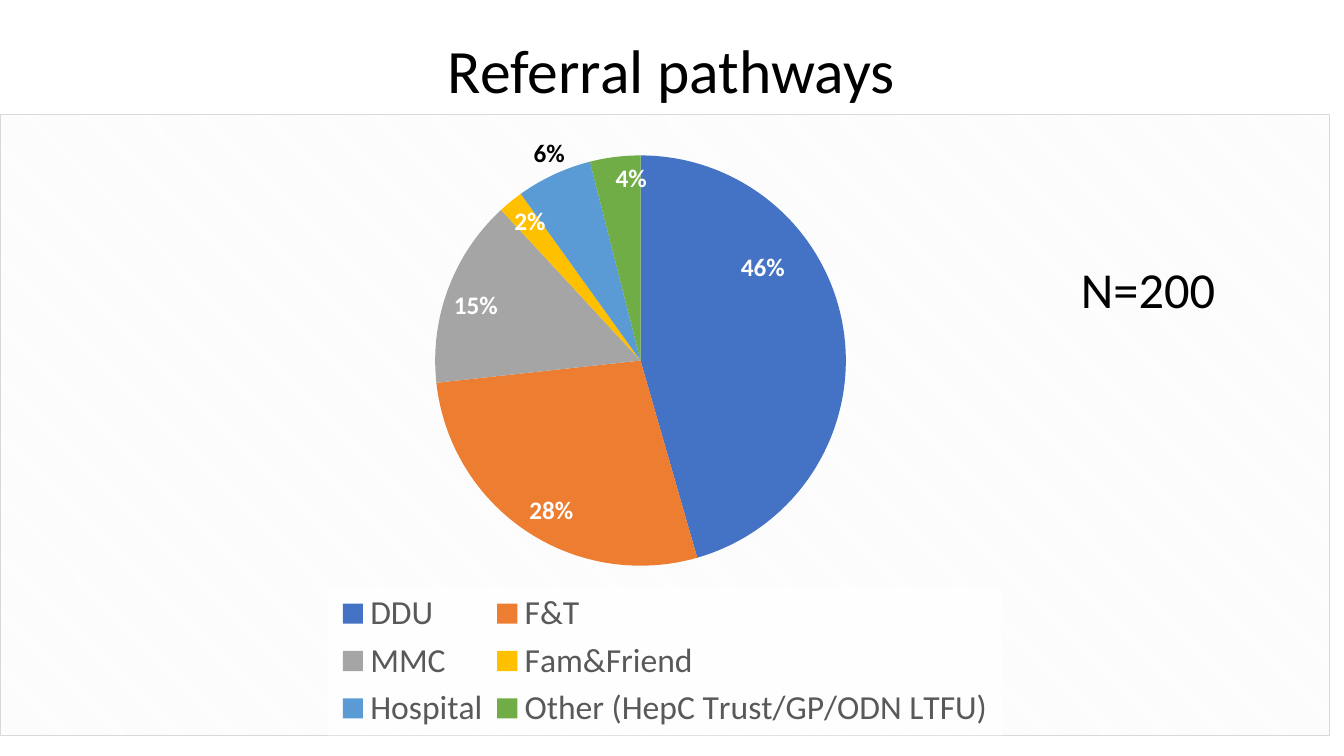
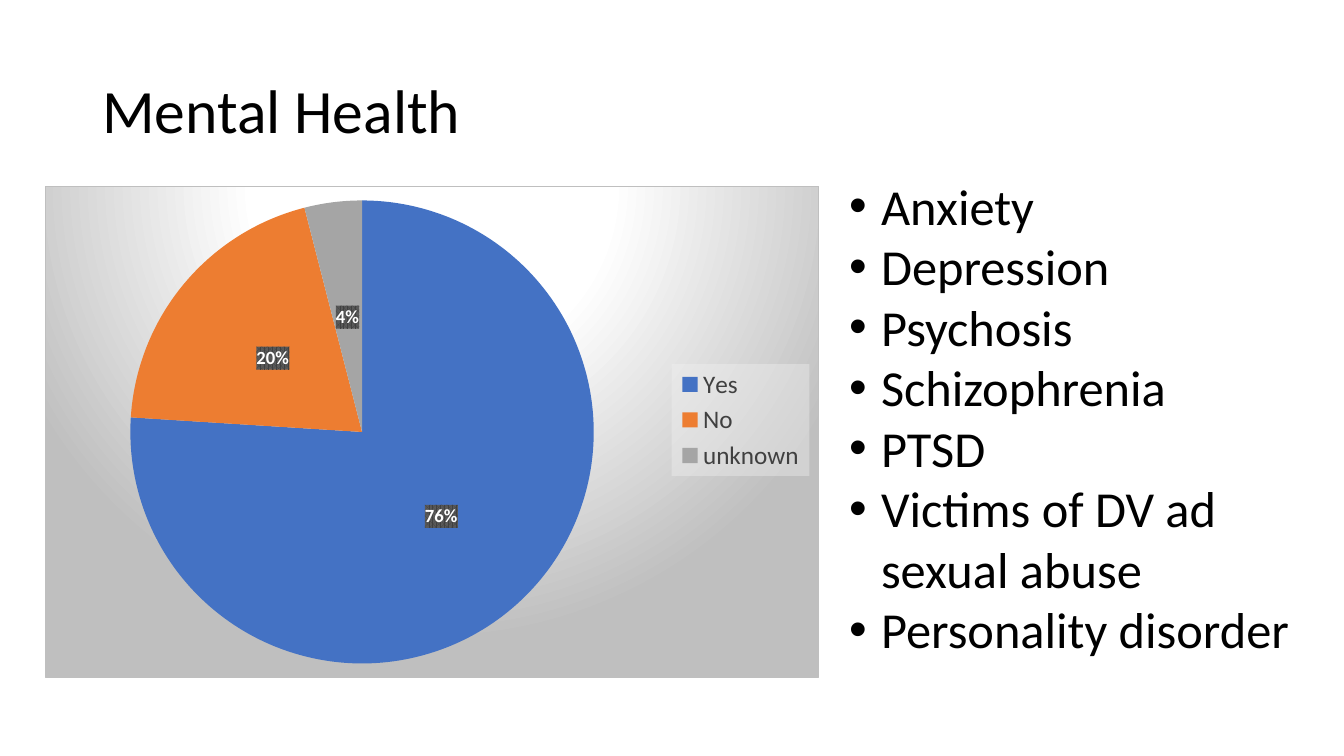
from pptx import Presentation
from pptx.chart.data import CategoryChartData
from pptx.dml.color import RGBColor
from pptx.enum.chart import XL_CHART_TYPE, XL_LABEL_POSITION, XL_LEGEND_POSITION
from pptx.enum.text import MSO_ANCHOR, MSO_AUTO_SIZE, PP_ALIGN
from pptx.oxml import parse_xml
from pptx.oxml.ns import nsdecls, qn
from pptx.util import Pt

PX = 914400 / 100.8
FONT = "Calibri"
PALETTE = ["4472C4", "ED7D31", "A5A5A5", "FFC000", "5B9BD5", "70AD47"]
NS = nsdecls("a", "c")
LABEL_PATTERN = (
    '<a:pattFill prst="pct75"><a:fgClr><a:srgbClr val="404040"/></a:fgClr>'
    '<a:bgClr><a:srgbClr val="595959"/></a:bgClr></a:pattFill>'
)
STRIPES = (
    '<a:pattFill prst="dkDnDiag"><a:fgClr><a:srgbClr val="F2F2F2"/></a:fgClr>'
    '<a:bgClr><a:srgbClr val="FFFFFF"/></a:bgClr></a:pattFill>'
)
SPOTLIGHT = (
    '<a:gradFill><a:gsLst><a:gs pos="0"><a:srgbClr val="FFFFFF"/></a:gs>'
    '<a:gs pos="39000"><a:srgbClr val="FFFFFF"/></a:gs>'
    '<a:gs pos="100000"><a:srgbClr val="BFBFBF"/></a:gs></a:gsLst>'
    '<a:path path="circle"><a:fillToRect l="50000" t="-80000" r="50000" b="180000"/>'
    '</a:path></a:gradFill>'
)


def rgb(value):
    return RGBColor.from_string(value)


def write(tf, text, size=36, color="000000", align=PP_ALIGN.LEFT, spacing=1.0, bullet=False):
    """Fill a text frame, one paragraph per line of text."""
    for i, line in enumerate(text.split("\n")):
        p = tf.paragraphs[0] if i == 0 else tf.add_paragraph()
        p.alignment, p.line_spacing, p.space_before = align, spacing, Pt(0)
        if bullet:
            pPr = p._p.get_or_add_pPr()
            indent = int(32 * PX)
            pPr.set("marL", str(indent))
            pPr.set("indent", str(-indent))
            pPr.append(parse_xml(f'<a:buFont {NS} typeface="Arial"/>'))
            pPr.append(parse_xml(f'<a:buChar {NS} char="•"/>'))
        r = p.add_run()
        r.text = line
        r.font.name, r.font.size, r.font.color.rgb = FONT, Pt(size), rgb(color)


SLIDES = [
    dict(
        title="Referral pathways", title_top=1, align=PP_ALIGN.CENTER, layout=5,
        box=(0, 114, 1330, 622), plot=(435, 41, 411, 411),
        background=STRIPES, border="D9D9D9",
        data={"DDU": 46, "F&T": 28, "MMC": 15, "Fam&Friend": 2, "Hospital": 6,
              "Other (HepC Trust/GP/ODN LTFU)": 4},
        label_pos=XL_LABEL_POSITION.INSIDE_END, label_size=18, label_fill="<a:noFill/>",
        legend_pos=XL_LEGEND_POSITION.BOTTOM, legend_box=(328, 473, 674, 149),
        legend_size=24, legend_color="595959", legend_fill=("FFFFFF", 78),
        special_labels={0: ("FFFFFF", XL_LABEL_POSITION.INSIDE_END, (-0.04, -0.13)),
                        4: ("000000", XL_LABEL_POSITION.OUTSIDE_END, (0.01, 0))},
    ),
    dict(
        title="Mental Health", title_top=41, align=PP_ALIGN.LEFT, layout=1,
        box=(45, 186, 774, 492), plot=(85, 14, 464, 464),
        background=SPOTLIGHT, border="BFBFBF",
        data={"Yes": 76, "No": 20, "unknown": 4},
        label_pos=XL_LABEL_POSITION.CENTER, label_size=13.3, label_fill=LABEL_PATTERN,
        legend_pos=XL_LEGEND_POSITION.RIGHT, legend_box=(627, 178, 138, 112),
        legend_size=18, legend_color="404040", legend_fill=("F2F2F2", 39),
        special_labels={},
    ),
]

prs = Presentation()
prs.slide_width, prs.slide_height = int(1344 * PX), int(756 * PX)

for item in SLIDES:
    s = prs.slides.add_slide(prs.slide_layouts[item["layout"]])
    title = s.shapes.title
    title.left, title.top, title.width, title.height = [
        int(v * PX) for v in (92, item["title_top"], 1159, 146)]
    title.text_frame.vertical_anchor = MSO_ANCHOR.MIDDLE
    write(title.text_frame, item["title"], size=44, align=item["align"], spacing=0.9)

    data = CategoryChartData()
    data.categories = list(item["data"])
    data.add_series("Series 1", list(item["data"].values()))
    box = [int(v * PX) for v in item["box"]]
    chart = s.shapes.add_chart(XL_CHART_TYPE.PIE, *box, data).chart
    chart.has_title = False
    chart.font.name, chart.font.size, chart.font.color.rgb = FONT, Pt(10), rgb("000000")
    chart._chartSpace.find(qn("c:chart")).addnext(parse_xml(
        f'<c:spPr {NS}>{item["background"]}<a:ln w="9525"><a:solidFill>'
        f'<a:srgbClr val="{item["border"]}"/></a:solidFill></a:ln></c:spPr>'))

    plot = chart.plots[0]
    plot.vary_by_categories = True
    series = plot.series[0]
    for i, color in enumerate(PALETTE[:len(item["data"])]):
        fill = series.points[i].format.fill
        fill.solid()
        fill.fore_color.rgb = rgb(color)

    labels = series.data_labels
    labels.show_value, labels.show_percentage = False, True
    labels.number_format, labels.number_format_is_linked = "0%", False
    labels.position = item["label_pos"]
    font = labels.font
    font.name, font.size, font.bold = FONT, Pt(item["label_size"]), True
    font.color.rgb = rgb("FFFFFF")
    labels._element.find(qn("c:txPr")).addprevious(
        parse_xml(f'<c:spPr {NS}>{item["label_fill"]}</c:spPr>'))

    for i, (color, position, shift) in item["special_labels"].items():
        label = series.points[i].data_label
        font = label.font
        font.name, font.size, font.bold = FONT, Pt(item["label_size"]), True
        font.color.rgb = rgb(color)
        label.position = position
        dLbl = labels._element.xpath(f'c:dLbl[c:idx/@val="{i}"]')[0]
        dLbl.find(qn("c:showVal")).set("val", "0")
        dLbl.find(qn("c:showPercent")).set("val", "1")
        dLbl.find(qn("c:idx")).addnext(parse_xml(
            f'<c:layout {NS}><c:manualLayout><c:x val="{shift[0]}"/>'
            f'<c:y val="{shift[1]}"/></c:manualLayout></c:layout>'))

    chart.has_legend = True
    legend = chart.legend
    legend.position, legend.include_in_layout = item["legend_pos"], False
    font = legend.font
    font.name, font.size = FONT, Pt(item["legend_size"])
    font.color.rgb = rgb(item["legend_color"])
    color, opacity = item["legend_fill"]
    legend._element.find(qn("c:txPr")).addprevious(parse_xml(
        f'<c:spPr {NS}><a:solidFill><a:srgbClr val="{color}">'
        f'<a:alpha val="{opacity * 1000}"/></a:srgbClr></a:solidFill></c:spPr>'))

    plot_area = chart._chartSpace.find(qn("c:chart")).find(qn("c:plotArea"))
    width, height = item["box"][2:]
    for parent, index, target, area in (
            (plot_area, 0, '<c:layoutTarget val="inner"/>', item["plot"]),
            (legend._element, 1, "", item["legend_box"])):
        for old in parent.findall(qn("c:layout")):
            parent.remove(old)
        x, y, w, h = [v / side for v, side in zip(area, (width, height) * 2)]
        parent.insert(index, parse_xml(
            f'<c:layout {NS}><c:manualLayout>{target}'
            f'<c:xMode val="edge"/><c:yMode val="edge"/><c:x val="{x:.4f}"/>'
            f'<c:y val="{y:.4f}"/><c:w val="{w:.4f}"/><c:h val="{h:.4f}"/>'
            f'</c:manualLayout></c:layout>'))

referrals, mental_health = prs.slides

total = referrals.shapes.add_textbox(*[int(v * PX) for v in (1071, 253, 156, 72)])
total.text_frame.word_wrap = False
total.text_frame.auto_size = MSO_AUTO_SIZE.SHAPE_TO_FIT_TEXT
write(total.text_frame, "N=200")

conditions = mental_health.placeholders[1]
conditions.left, conditions.top, conditions.width, conditions.height = [
    int(v * PX) for v in (839, 170, 481, 499)]
conditions.text_frame.auto_size = MSO_AUTO_SIZE.SHAPE_TO_FIT_TEXT
write(conditions.text_frame,
      "Anxiety\nDepression\nPsychosis\nSchizophrenia\nPTSD\n"
      "Victims of DV ad sexual abuse\nPersonality disorder", bullet=True)

prs.save("out.pptx")
